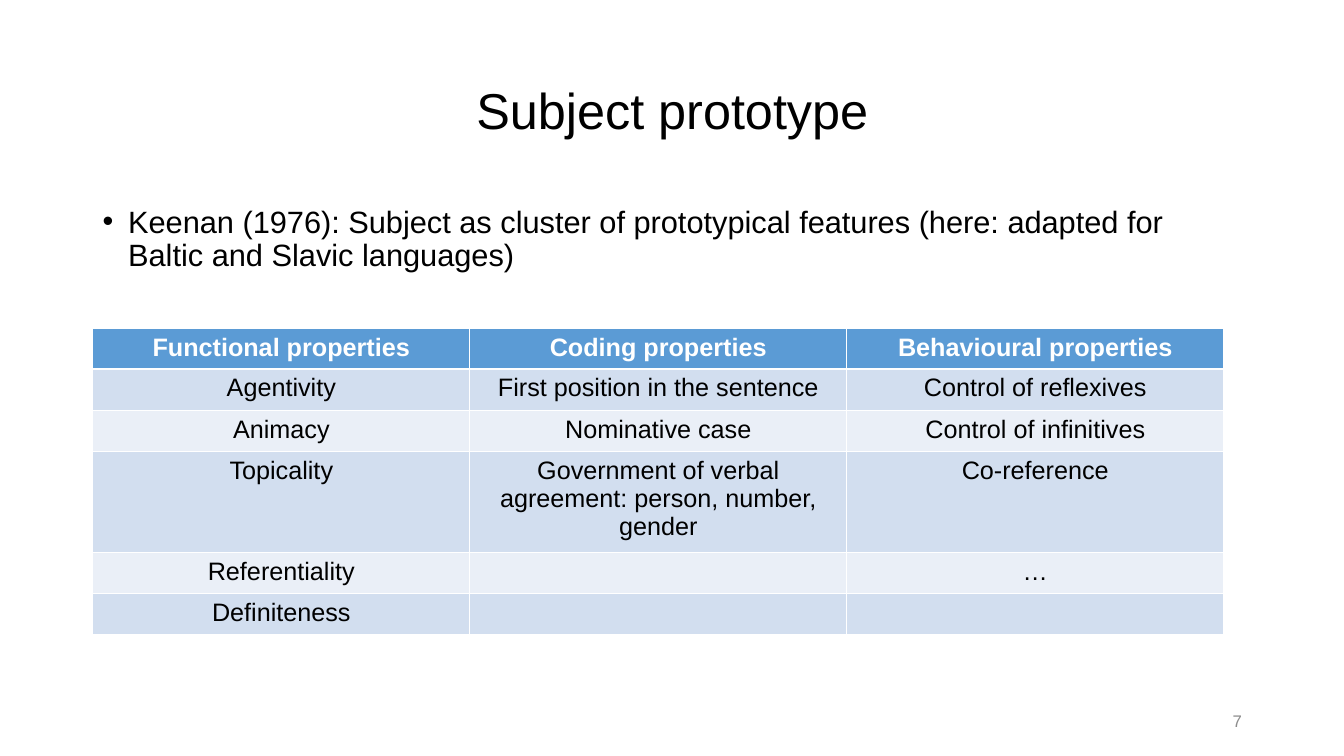
"""Build the slide on the subject prototype, with its table of properties."""
from dataclasses import dataclass

from lxml.etree import SubElement
from pptx import Presentation
from pptx.dml.color import RGBColor
from pptx.enum.text import MSO_ANCHOR as Anchor, PP_ALIGN as Align
from pptx.oxml.ns import qn
from pptx.slide import Slide
from pptx.text.text import TextFrame
from pptx.util import Cm, Pt


@dataclass(frozen=True)
class Theme:
    font: str = "Arial"
    text: str = "000000"
    header_text: str = "FFFFFF"
    header_fill: str = "5B9BD5"
    band_fills: tuple[str, str] = ("D2DEEF", "EAEFF7")
    muted: str = "8C8C8C"
    title_size: int = 36
    body_size: int = 22
    table_size: int = 18
    number_size: int = 12


@dataclass(frozen=True)
class Box:
    left: float
    top: float
    width: float
    height: float

    def lengths(self) -> tuple[Cm, Cm, Cm, Cm]:
        return Cm(self.left), Cm(self.top), Cm(self.width), Cm(self.height)


@dataclass(frozen=True)
class PropertyRow:
    functional: str
    coding: str = ""
    behavioural: str = ""

    def texts(self) -> tuple[str, str, str]:
        return self.functional, self.coding, self.behavioural


THEME = Theme()
TITLE_BOX = Box(2.34, 1.02, 29.21, 3.68)
BODY_BOX = Box(2.34, 5.08, 29.21, 12.09)
TABLE_BOX = Box(2.34, 8.28, 28.5, 5.99)
NUMBER_BOX = Box(23.93, 17.65, 7.62, 1.02)
HEADER_HEIGHT = 0.79
ROW_HEIGHT = 1.04
BULLET_INDENT = 0.64

PROPERTY_ROWS = (
    PropertyRow("Functional properties", "Coding properties", "Behavioural properties"),
    PropertyRow("Agentivity", "First position in the sentence", "Control of reflexives"),
    PropertyRow("Animacy", "Nominative case", "Control of infinitives"),
    PropertyRow("Topicality", "Government of verbal agreement: person, number, gender", "Co-reference"),
    PropertyRow("Referentiality", behavioural="…"),
    PropertyRow("Definiteness"),
)


def write_text(frame: TextFrame, text: str, *, size: int, color: str = THEME.text,
               bold: bool = False, align: Align = Align.LEFT, anchor: Anchor = Anchor.TOP,
               line_spacing: float = 1.0, space_before: int = 0, bullet: str = "") -> None:
    """Write one formatted paragraph into a text frame."""
    frame.word_wrap = True
    frame.vertical_anchor = anchor
    paragraph = frame.paragraphs[0]
    paragraph.alignment = align
    paragraph.line_spacing = line_spacing
    paragraph.space_before = Pt(space_before)
    if bullet:
        properties = paragraph._p.get_or_add_pPr()
        properties.set("marL", str(Cm(BULLET_INDENT)))
        properties.set("indent", str(-Cm(BULLET_INDENT)))
        SubElement(properties, qn("a:buFont"), typeface=THEME.font)
        SubElement(properties, qn("a:buChar"), char=bullet)
    run = paragraph.add_run()
    run.text = text
    run.font.name = THEME.font
    run.font.size = Pt(size)
    run.font.bold = bold
    run.font.color.rgb = RGBColor.from_string(color)


def add_title(slide: Slide, text: str) -> None:
    """Place and format the title placeholder."""
    title = slide.shapes.title
    title.left, title.top, title.width, title.height = TITLE_BOX.lengths()
    write_text(title.text_frame, text, size=THEME.title_size, align=Align.CENTER,
               anchor=Anchor.MIDDLE, line_spacing=0.9)


def add_property_table(slide: Slide, rows: tuple[PropertyRow, ...]) -> None:
    """Draw the table with a header row and alternating row fills."""
    columns = len(rows[0].texts())
    table = slide.shapes.add_table(len(rows), columns, *TABLE_BOX.lengths()).table
    for column in table.columns:
        column.width = Cm(TABLE_BOX.width / columns)
    for index, row in enumerate(rows):
        header = index == 0
        table.rows[index].height = Cm(HEADER_HEIGHT if header else ROW_HEIGHT)
        fill = THEME.header_fill if header else THEME.band_fills[(index - 1) % 2]
        for cell, text in zip(table.rows[index].cells, row.texts()):
            cell.fill.solid()
            cell.fill.fore_color.rgb = RGBColor.from_string(fill)
            if text:
                write_text(cell.text_frame, text, size=THEME.table_size, bold=header,
                           color=THEME.header_text if header else THEME.text, align=Align.CENTER)


def main() -> None:
    """Build and save the presentation."""
    presentation = Presentation()
    presentation.slide_width, presentation.slide_height = Cm(33.87), Cm(19.05)
    slide = presentation.slides.add_slide(presentation.slide_layouts.get_by_name("Title Only"))
    add_title(slide, "Subject prototype")
    body = slide.shapes.add_textbox(*BODY_BOX.lengths())
    write_text(body.text_frame,
               "Keenan (1976): Subject as cluster of prototypical features "
               "(here: adapted for Baltic and Slavic languages)",
               size=THEME.body_size, line_spacing=0.9, space_before=10, bullet="•")
    add_property_table(slide, PROPERTY_ROWS)
    number = slide.shapes.add_textbox(*NUMBER_BOX.lengths())
    write_text(number.text_frame, "7", size=THEME.number_size, color=THEME.muted,
               align=Align.RIGHT, anchor=Anchor.MIDDLE)
    presentation.save("out.pptx")


if __name__ == "__main__":
    main()
